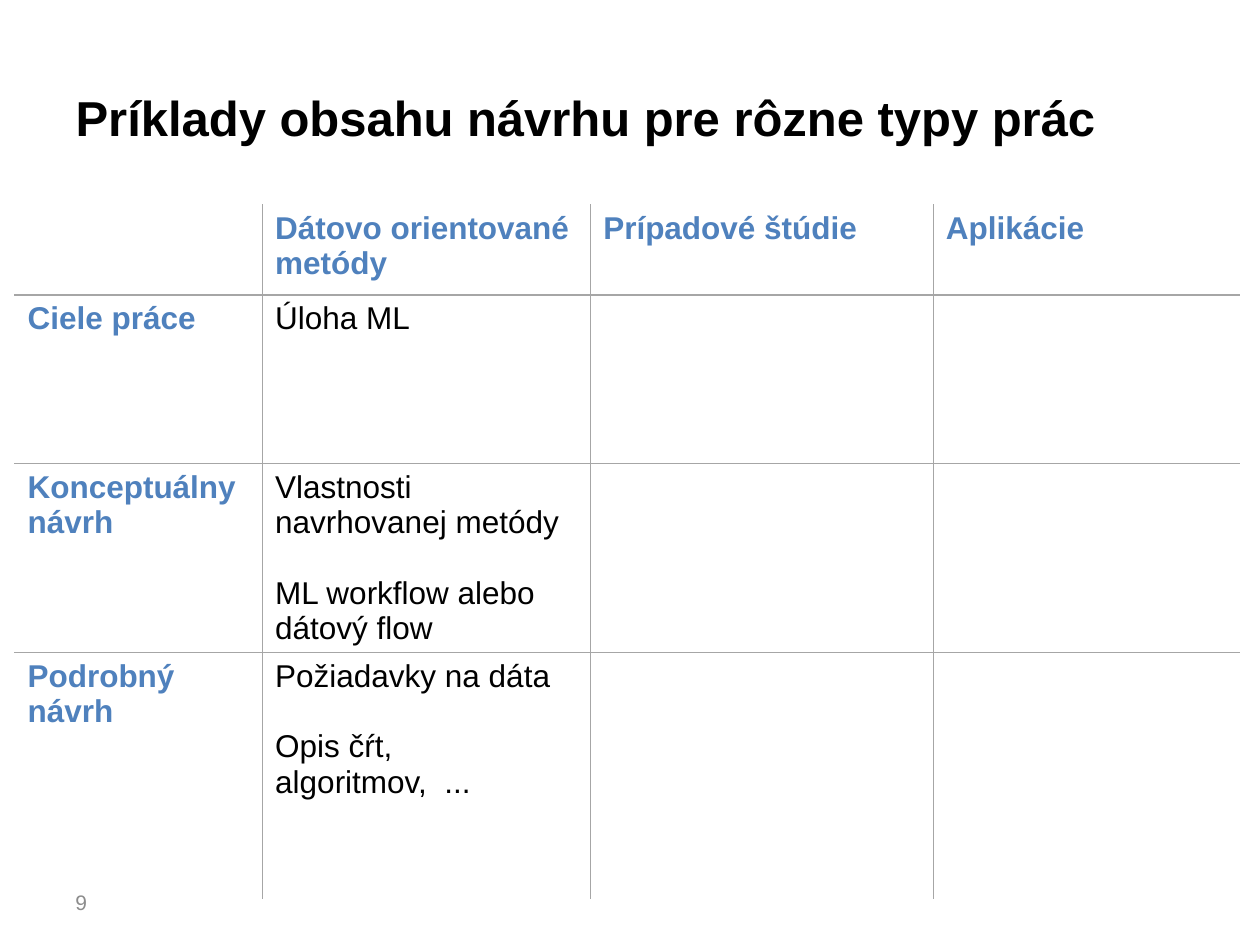
"""Build a slide with a table of design contents for types of thesis."""
from lxml.etree import SubElement
from pptx import Presentation
from pptx.dml.color import RGBColor
from pptx.enum.text import MSO_ANCHOR, PP_ALIGN
from pptx.oxml.ns import qn
from pptx.util import Pt


def style(para, size, color, bold=False):
    for run in para.runs:
        run.font.name = "Arial"
        run.font.size = Pt(size)
        run.font.bold = bold
        run.font.color.rgb = RGBColor.from_string(color)


def border(cell, side, color):
    line = SubElement(cell._tc.get_or_add_tcPr(), qn(f"a:ln{side}"), w=str(Pt(1)))
    fill = SubElement(line, qn("a:solidFill"))
    SubElement(fill, qn("a:srgbClr"), val=color)


deck = Presentation()
deck.slide_width, deck.slide_height = Pt(720), Pt(540)
slide = deck.slides.add_slide(deck.slide_layouts[5])

title = slide.shapes.title
title.left, title.top, title.width, title.height = Pt(36), Pt(21.6), Pt(648), Pt(90)
title.text_frame.text = "Príklady obsahu návrhu pre rôzne typy prác"
title.text_frame.vertical_anchor = MSO_ANCHOR.MIDDLE
title.text_frame.paragraphs[0].alignment = PP_ALIGN.LEFT
style(title.text_frame.paragraphs[0], 28, "000000", True)

rows = [
    ["", "Dátovo orientované metódy", "Prípadové štúdie", "Aplikácie"],
    ["Ciele práce", "Úloha ML", "", ""],
    ["Konceptuálny návrh",
     "Vlastnosti navrhovanej metódy\nML workflow alebo dátový flow", "", ""],
    ["Podrobný návrh",
     "Požiadavky na dáta\nOpis čŕt, algoritmov,  ...", "", ""],
]
widths = [141.5, 187.5, 195.8, 174.8]
heights = [51.5, 96.5, 108, 141]
table = slide.shapes.add_table(
    len(rows), len(widths), Pt(8.6), Pt(117), Pt(sum(widths)), Pt(sum(heights))).table
table.first_row = table.horz_banding = False
for col, width in zip(table.columns, widths):
    col.width = Pt(width)
for row, height in zip(table.rows, heights):
    row.height = Pt(height)

for r, texts in enumerate(rows):
    for c, text in enumerate(texts):
        cell = table.cell(r, c)
        inner = {"L": c > 0, "R": c < len(widths) - 1,
                 "T": r > 0, "B": r < len(rows) - 1}
        for side, shown in inner.items():
            if shown:
                border(cell, side, "A6A6A6")
        cell.fill.background()
        cell.text_frame.text = text
        head = r == 0 or c == 0
        for i, para in enumerate(cell.text_frame.paragraphs):
            if i:
                para.space_before = Pt(20)
            style(para, 18, "4F81BD" if head else "000000", head)

number = slide.shapes.add_textbox(Pt(36), Pt(501), Pt(168), Pt(28.8)).text_frame
number.word_wrap = True
number.vertical_anchor = MSO_ANCHOR.MIDDLE
number.text = "9"
style(number.paragraphs[0], 12, "8C8C8C")

deck.save("out.pptx")
